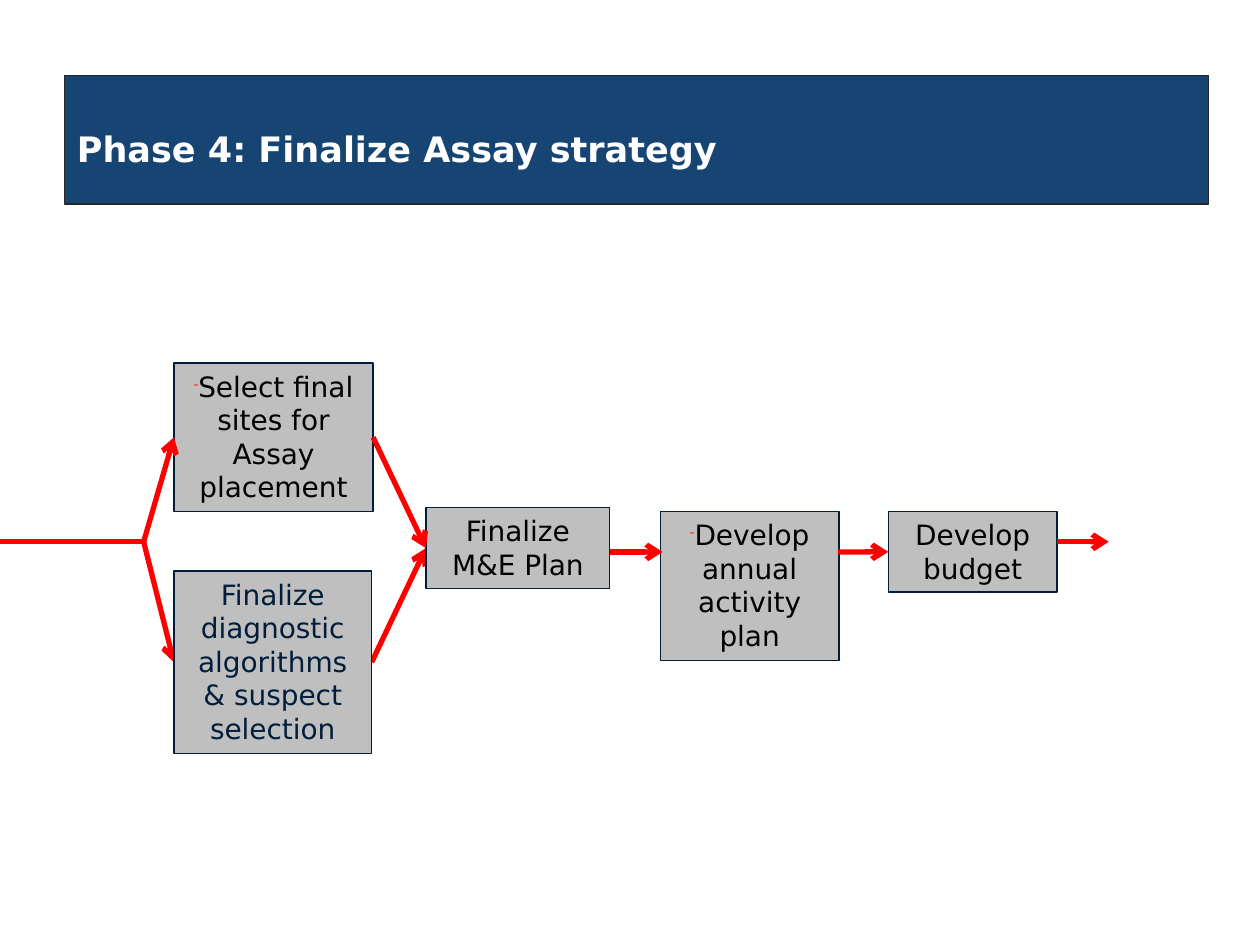
"""Build the Phase 4 strategy flow slide."""
from dataclasses import dataclass
from typing import Optional

from lxml import etree
from pptx import Presentation
from pptx import util as u
from pptx.dml.color import RGBColor
from pptx.enum import shapes, text
from pptx.oxml import ns


@dataclass(frozen=True)
class Theme:
    """Colours, font and sizes in points."""
    face: str = "DejaVu Sans"
    ink: str = "000000"
    navy: str = "001D3B"
    grey: str = "BFBFBF"
    red: str = "FF0000"
    dash: str = "FF3300"
    bar: str = "003366"
    edge: str = "272727"
    white: str = "FFFFFF"
    body: float = 16
    head: float = 20
    thin: float = 0.75
    thick: float = 3


@dataclass(frozen=True)
class Step:
    """One box of the flow."""
    name: str
    label: str
    area: tuple
    ink: str = Theme.ink
    dash: bool = False


@dataclass(frozen=True)
class Link:
    """One line, from and to a point or a (step, side) pair."""
    start: tuple
    end: tuple
    arrow: bool = True
    back: bool = False


T = Theme()
TOP, LEFT, BOTTOM, RIGHT = range(4)
FORK_X, FORK_Y, MID_Y = 82.1, 309.6, 315.4
FORK = (FORK_X, FORK_Y)
STEPS = [
    Step("plan", "Finalize M&E Plan", (243.4, 290.2, 105.1, 46.1)),
    Step("sites", "Select final sites for Assay placement",
         (99.4, 207.4, 113.8, 85), dash=True),
    Step("tests", "Finalize diagnostic algorithms & suspect selection",
         (99.4, 326.2, 113, 104.4), T.navy),
    Step("year", "Develop annual activity plan",
         (377.3, 292.3, 102.2, 85), dash=True),
    Step("budget", "Develop budget", (507.6, 292.3, 96.5, 46.1)),
]
LINKS = [
    Link(FORK, ("tests", LEFT), back=True),
    Link(("tests", RIGHT), ("plan", LEFT), back=True),
    Link((604.1, FORK_Y), (633.6, FORK_Y)),
    Link((348.5, MID_Y), (378.7, MID_Y)),
    Link((478.8, MID_Y), ("budget", LEFT)),
    Link(("sites", RIGHT), ("plan", LEFT)),
    Link(FORK, ("sites", LEFT)),
    Link((0, FORK_Y), (83.5, FORK_Y), arrow=False),
]


def tint(code: str) -> RGBColor:
    """Turn a hex code into a colour."""
    return RGBColor.from_string(code)


def apply(thing, looks: dict) -> None:
    """Set each named attribute."""
    for name, value in looks.items():
        setattr(thing, name, value)


def child(node, tag: str, **looks: str):
    """Add one XML child."""
    return etree.SubElement(node, ns.qn(tag), looks)


def style(para, size: float, ink: str, bold: bool = False) -> None:
    """Format the text of a paragraph."""
    font = para.runs[0].font
    apply(font, {"name": T.face, "size": u.Pt(size), "bold": bold})
    font.color.rgb = tint(ink)


def bullet(para) -> None:
    """Give a paragraph a small dash."""
    props = para._p.get_or_add_pPr()
    apply_xml = {"marL": "0", "indent": "0"}
    for name, value in apply_xml.items():
        props.set(name, value)
    child(child(props, "a:buClr"), "a:srgbClr", val=T.dash)
    child(props, "a:buSzPct", val="50000")
    child(props, "a:buChar", char="-")


def block(slide, area: tuple, fill: str, edge: str):
    """Draw a plain rectangle."""
    box = slide.shapes.add_shape(
        shapes.MSO_SHAPE.RECTANGLE, *map(u.Pt, area))
    box.shadow.inherit = False
    box.fill.solid()
    box.fill.fore_color.rgb = tint(fill)
    box.line.color.rgb = tint(edge)
    box.line.width = u.Pt(T.thin)
    return box


def draw_step(slide, step: Step):
    """Draw one labelled box."""
    box = block(slide, step.area, T.grey, T.navy)
    frame = box.text_frame
    apply(frame, {"word_wrap": True,
                  "vertical_anchor": text.MSO_ANCHOR.TOP,
                  "auto_size": text.MSO_AUTO_SIZE.SHAPE_TO_FIT_TEXT})
    para = frame.paragraphs[0]
    para.alignment = text.PP_ALIGN.CENTER
    if step.dash:
        bullet(para)
    para.add_run().text = step.label
    style(para, T.body, step.ink)
    return box


def spot(end: tuple) -> Optional[tuple]:
    """Return the point of a free end."""
    return None if isinstance(end[0], str) else tuple(map(u.Pt, end))


def draw_link(slide, link: Link, boxes: dict) -> None:
    """Draw one line, joined to its boxes."""
    start, end = spot(link.start), spot(link.end)
    line = slide.shapes.add_connector(
        shapes.MSO_CONNECTOR.STRAIGHT, *(start or (0, 0)), *(end or (0, 0)))
    if not start:
        line.begin_connect(boxes[link.start[0]], link.start[1])
    if not end:
        line.end_connect(boxes[link.end[0]], link.end[1])
    line.line.color.rgb = tint(T.red)
    line.line.width = u.Pt(T.thick)
    node = line._element
    if link.arrow:
        child(line.line._get_or_add_ln(), "a:tailEnd", type="arrow")
    child(node.spPr, "a:effectLst")
    if link.back:
        node.getparent().insert(2, node)


def draw_title(slide) -> None:
    """Draw the title on its bar."""
    bar = block(slide, (36.7, 43.2, 653.8, 73.4), T.bar, T.edge)
    shade = bar._element.spPr.find(ns.qn("a:solidFill"))[0]
    child(shade, "a:alpha", val="91000")
    title = slide.shapes.title
    area = zip(("left", "top", "width", "height"), (36.7, 69, 650.2, 54))
    apply(title, {name: u.Pt(value) for name, value in area})
    frame = title.text_frame
    frame.text = "Phase 4: Finalize Assay strategy"
    apply(frame, {"word_wrap": True,
                  "vertical_anchor": text.MSO_ANCHOR.TOP,
                  "auto_size": text.MSO_AUTO_SIZE.NONE})
    para = frame.paragraphs[0]
    apply(para, {"alignment": text.PP_ALIGN.LEFT, "space_before": u.Pt(0)})
    style(para, T.head, T.white, True)
    title._element.getparent().append(title._element)


def main() -> None:
    """Build and save the deck."""
    deck = Presentation()
    apply(deck, {"slide_width": u.Pt(720), "slide_height": u.Pt(540)})
    slide = deck.slides.add_slide(deck.slide_layouts[5])
    boxes = {step.name: draw_step(slide, step) for step in STEPS}
    for link in LINKS:
        draw_link(slide, link, boxes)
    draw_title(slide)
    deck.save("out.pptx")


if __name__ == "__main__":
    main()
